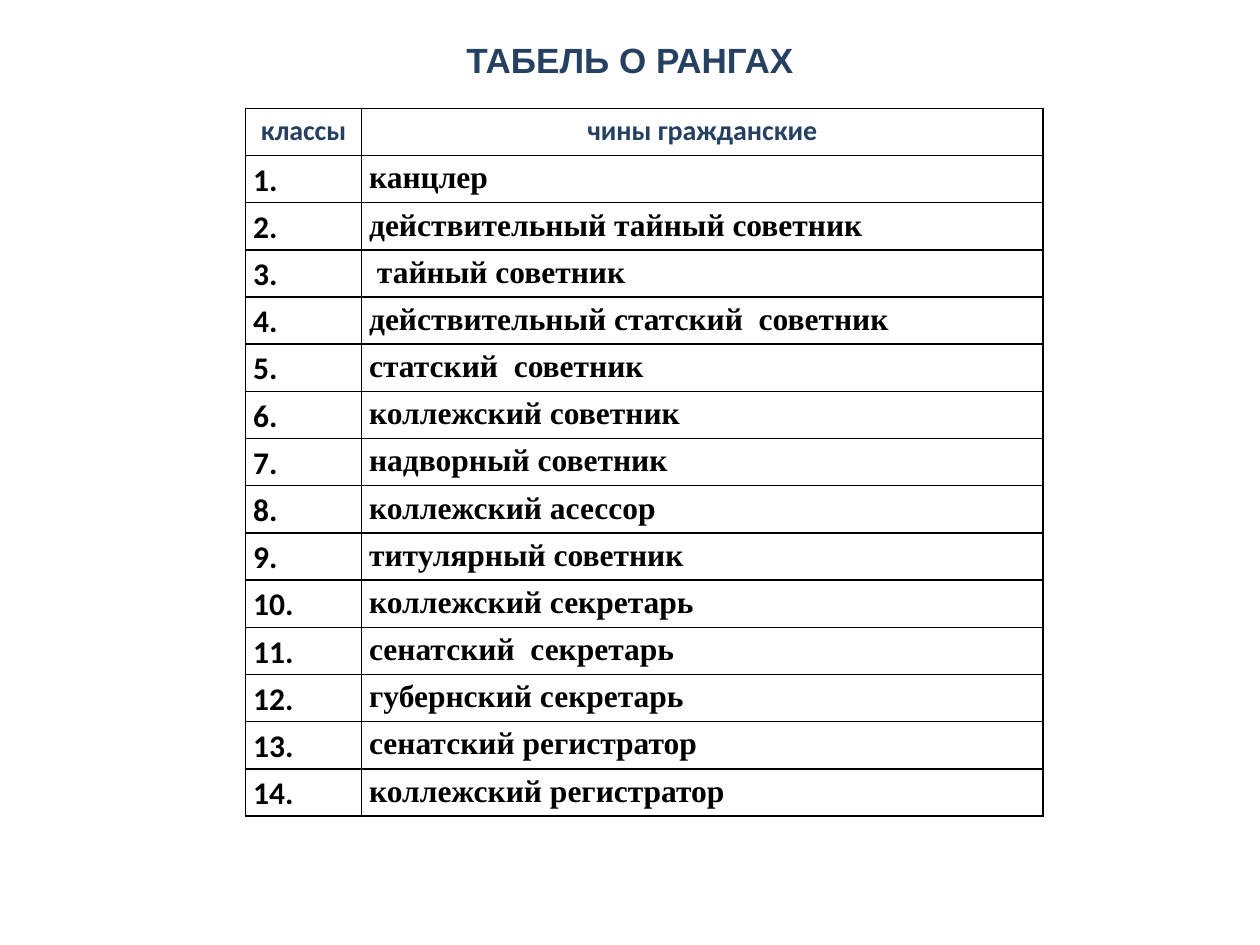
from lxml.etree import SubElement
from pptx import Presentation
from pptx.dml.color import RGBColor
from pptx.enum.text import MSO_ANCHOR, PP_ALIGN
from pptx.oxml.ns import qn
from pptx.util import Inches, Pt

TITLE = "ТАБЕЛЬ О РАНГАХ"
HEADINGS = ("классы", "чины гражданские")
RANKS = [
    "канцлер",
    "действительный тайный советник",
    " тайный советник",
    "действительный статский  советник",
    "статский  советник",
    "коллежский советник",
    "надворный советник",
    "коллежский асессор",
    "титулярный советник",
    "коллежский секретарь",
    "сенатский  секретарь",
    "губернский секретарь",
    "сенатский регистратор",
    "коллежский регистратор",
]
COLUMN_WIDTHS = (0.92, 5.41)
TABLE_HEIGHT = 5.62
NUMBER_INDENT = Inches(0.38)
NAVY = RGBColor(0x25, 0x40, 0x61)
BLACK = RGBColor(0, 0, 0)


def style_text(paragraph, font_name, size, color):
    for run in paragraph.runs:
        run.font.name = font_name
        run.font.size = Pt(size)
        run.font.bold = True
        run.font.color.rgb = color


def add_borders(cell):
    properties = cell._tc.get_or_add_tcPr()
    for side in ("a:lnL", "a:lnR", "a:lnT", "a:lnB"):
        line = SubElement(properties, qn(side), w=str(Pt(1)))
        fill = SubElement(line, qn("a:solidFill"))
        SubElement(fill, qn("a:srgbClr"), val=str(BLACK))


def fill_cell(cell, text, font_name, size, color):
    cell.margin_left = cell.margin_right = Inches(0.06)
    cell.margin_top = cell.margin_bottom = 0
    add_borders(cell)
    cell.fill.background()
    cell.text_frame.text = text
    paragraph = cell.text_frame.paragraphs[0]
    paragraph.line_spacing = 1.15
    style_text(paragraph, font_name, size, color)
    return paragraph


def add_title(slide):
    title = slide.shapes.title
    title.left, title.top = Inches(2.11), Inches(0.23)
    title.width, title.height = Inches(5.78), Inches(0.48)
    title.text_frame.text = TITLE
    title.text_frame.vertical_anchor = MSO_ANCHOR.MIDDLE
    paragraph = title.text_frame.paragraphs[0]
    paragraph.alignment = PP_ALIGN.CENTER
    style_text(paragraph, "Arial", 20, NAVY)


def add_rank_table(slide):
    row_count = len(RANKS) + 1
    table = slide.shapes.add_table(
        row_count, len(HEADINGS), Inches(1.95), Inches(0.86),
        Inches(sum(COLUMN_WIDTHS)), Inches(TABLE_HEIGHT),
    ).table
    table.first_row = table.horz_banding = False
    for column, width in zip(table.columns, COLUMN_WIDTHS):
        column.width = Inches(width)
    for row in table.rows:
        row.height = Inches(TABLE_HEIGHT / row_count)

    for column, heading in enumerate(HEADINGS):
        paragraph = fill_cell(table.cell(0, column), heading, "Calibri", 16, NAVY)
        paragraph.alignment = PP_ALIGN.CENTER
    for number, rank in enumerate(RANKS, 1):
        paragraph = fill_cell(table.cell(number, 0), f"{number}.", "Calibri", 18, BLACK)
        indents = paragraph._p.get_or_add_pPr()
        indents.set("marL", str(NUMBER_INDENT))
        indents.set("indent", str(-NUMBER_INDENT))
        fill_cell(table.cell(number, 1), rank, "Times New Roman", 18, BLACK)


def main():
    deck = Presentation()
    deck.slide_width, deck.slide_height = Inches(10), Inches(7.5)
    slide = deck.slides.add_slide(deck.slide_layouts[5])
    add_rank_table(slide)
    add_title(slide)
    deck.save("out.pptx")


if __name__ == "__main__":
    main()
